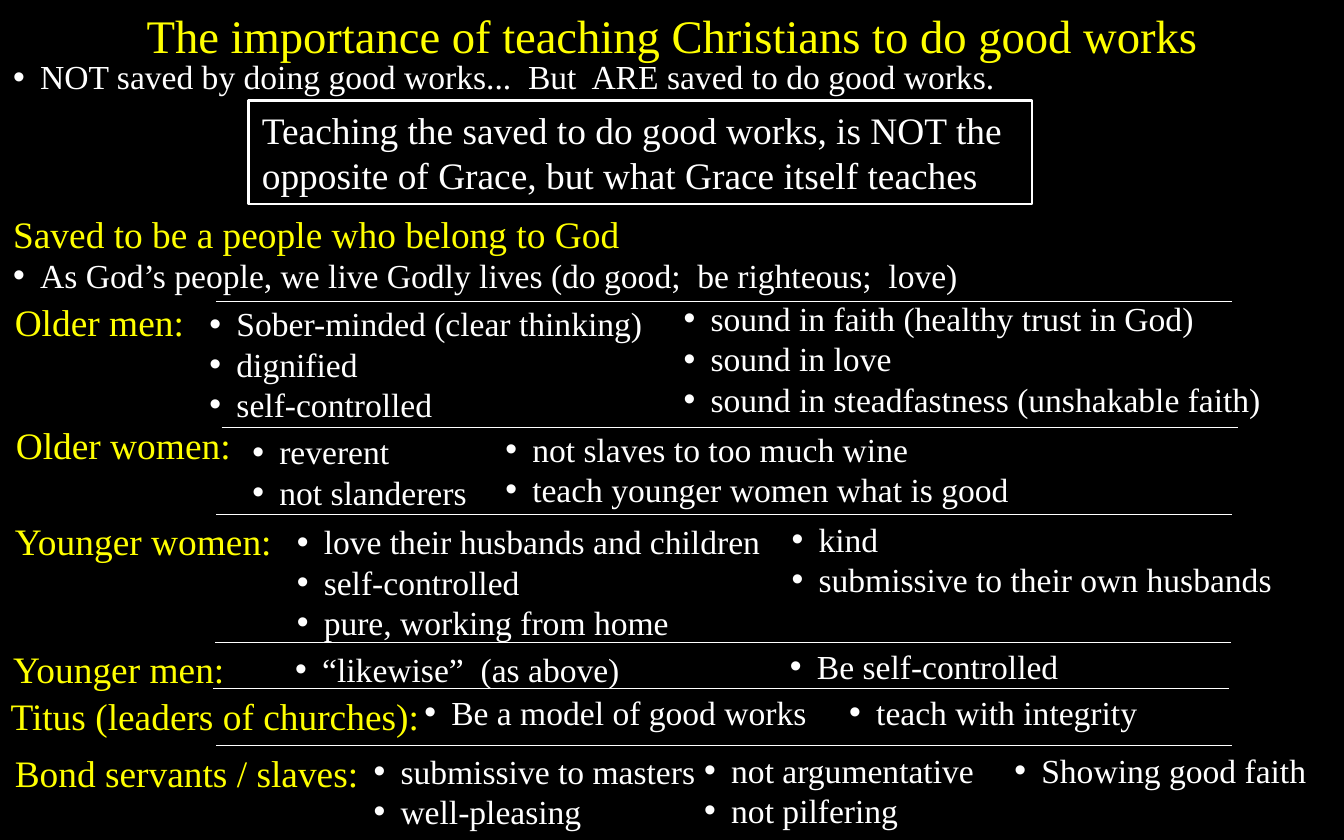
from lxml.etree import SubElement as Sub
from pptx import Presentation as Deck
from pptx.dml.color import RGBColor as Rgb
from pptx.enum.shapes import MSO_CONNECTOR as Link, MSO_SHAPE as Form
from pptx.enum.text import MSO_AUTO_SIZE as Auto, MSO_ANCHOR as Anchor, PP_ALIGN as Align
from pptx.oxml.ns import qn
from pptx.util import Cm, Pt

# Content: places and widths are in centimetres
TITLE = "The importance of teaching Christians to do good works"
HEAD = "Saved to be a people who belong to God"
CLAIM = ("Teaching the saved to do good works, is NOT the opposite of Grace, "
         "but what Grace itself teaches")
POINTS = [  # left, top, width, items
    (0, 0.94, 21.87, ["NOT saved by doing good works...  But  ARE saved to do good works."]),
    (0, 4.7, 25.4, ["As God’s people, we live Godly lives (do good;  be righteous;  love)"]),
]
GROUPS = [  # label (text, left, top, width), rule (left, top), lists
    (("Older men:", 0.03, 5.54, 13.36), (4.09, 5.69), [
        (3.71, 5.61, 8.84, ["Sober-minded (clear thinking)", "dignified", "self-controlled"]),
        (12.67, 5.51, 12.67, ["sound in faith (healthy trust in God)", "sound in love",
                              "sound in steadfastness (unshakable faith)"])]),
    (("Older women:", 0.05, 7.85, 4.88), (4.19, 8.08), [
        (4.52, 8.03, 8.84, ["reverent", "not slanderers"]),
        (9.3, 7.98, 11.18, ["not slaves to too much wine",
                            "teach younger women what is good"])]),
    (("Younger women:", 0.03, 9.68, 5.49), (4.09, 9.72), [
        (5.36, 9.73, 9.35, ["love their husbands and children", "self-controlled",
                            "pure, working from home"]),
        (14.71, 9.68, 10.69, ["kind", "submissive to their own husbands"])]),
    (("Younger men:", 0, 12.09, 5.49), (4.07, 12.14), [
        (5.33, 12.14, 9.35, ["“likewise”  (as above)"]),
        (14.68, 12.09, 10.69, ["Be self-controlled"])]),
    (("Titus (leaders of churches):", -0.05, 12.98, 8.94), (4.03, 13.02), [
        (7.77, 12.95, 8.08, ["Be a model of good works"]),
        (15.8, 12.95, 7.44, ["teach with integrity"])]),
    (("Bond servants / slaves:", 0.03, 14.05, 8.94), (4.09, 14.09), [
        (6.81, 14.07, 8.08, ["submissive to masters", "well-pleasing"]),
        (13.06, 14.05, 5.92, ["not argumentative", "not pilfering"]),
        (18.92, 14.05, 6.48, ["Showing good faith"])]),
]


class Theme:
    font = "Times New Roman"
    back, gold, white = (Rgb.from_string(c) for c in ("000000", "FFFF00", "FFFFFF"))
    title, head, body = Pt(25), Pt(20), Pt(18)
    frame, rule = Pt(1.25), Pt(0.5)
    step, pad, hang, span = 0.77, 0.25, 0.51, 19.2


def write(shape, lines, size, color, align=Align.LEFT, dots=False):
    frame = shape.text_frame
    frame.word_wrap = True
    frame.auto_size = Auto.SHAPE_TO_FIT_TEXT
    frame.vertical_anchor = Anchor.TOP
    for i, line in enumerate(lines):
        para = frame.add_paragraph() if i else frame.paragraphs[0]
        para.text = line
        para.alignment = align
        font = para.font
        font.name, font.size, font.color.rgb = Theme.font, size, color
        if dots:
            props = para._p.get_or_add_pPr()
            props.set("marL", str(Cm(Theme.hang)))
            props.set("indent", str(-Cm(Theme.hang)))
            # Bullet belongs before the default run properties
            face = props.makeelement(qn("a:buFont"), {"typeface": "Arial"})
            props.insert(0, face)
            face.addnext(props.makeelement(qn("a:buChar"), {"char": "•"}))


def place(slide, left, top, wide, high):
    return slide.shapes.add_textbox(Cm(left), Cm(top), Cm(wide), Cm(high))


def label(slide, text, left, top, wide):
    write(place(slide, left, top, wide, 1.12), [text], Theme.head, Theme.gold)


def bullets(slide, left, top, wide, items):
    high = Theme.pad + Theme.step * len(items)
    write(place(slide, left, top, wide, high), items, Theme.body, Theme.white, dots=True)


def rule(slide, left, top):
    line = slide.shapes.add_connector(
        Link.STRAIGHT, Cm(left), Cm(top), Cm(left + Theme.span), Cm(top))
    line.line.color.rgb, line.line.width = Theme.white, Theme.rule
    Sub(line._element.spPr, qn("a:effectLst"))


def main():
    deck = Deck()
    deck.slide_width, deck.slide_height = Cm(25.4), Cm(15.88)
    slide = deck.slides.add_slide(deck.slide_layouts[6])
    fill = slide.background.fill
    fill.solid()
    fill.fore_color.rgb = Theme.back

    # Title, heading and opening points
    write(place(slide, 0, 0, 25.4, 1.32), [TITLE], Theme.title, Theme.gold, Align.CENTER)
    label(slide, HEAD, 0, 3.86, 13.36)
    for point in POINTS:
        bullets(slide, *point)

    # Framed claim
    box = slide.shapes.add_shape(Form.RECTANGLE, Cm(4.7), Cm(1.9), Cm(14.81), Cm(1.96))
    box.shadow.inherit = False
    box.fill.background()
    box.line.color.rgb, box.line.width = Theme.white, Theme.frame
    write(box, [CLAIM], Theme.head, Theme.white)

    # Groups of people, each under a rule
    for name, start, lists in GROUPS:
        rule(slide, *start)
        label(slide, *name)
        for part in lists:
            bullets(slide, *part)

    deck.save("out.pptx")


if __name__ == "__main__":
    main()
